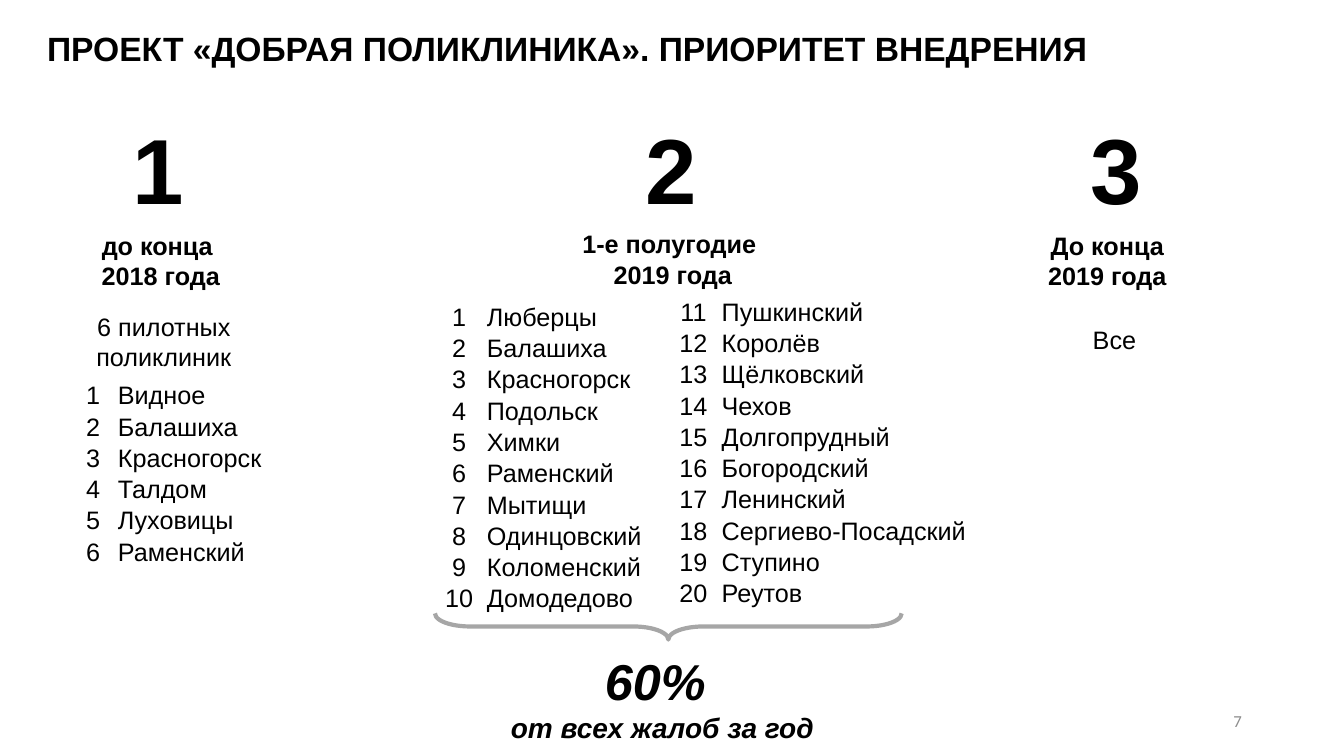
from dataclasses import dataclass

from pptx import Presentation
from pptx.dml.color import RGBColor
from pptx.enum.shapes import MSO_SHAPE
from pptx.enum.text import MSO_ANCHOR, MSO_AUTO_SIZE, PP_ALIGN
from pptx.oxml.ns import qn
from pptx.slide import Slide
from pptx.text.text import _Paragraph as Paragraph
from pptx.util import Pt

BLACK = RGBColor(0x00, 0x00, 0x00)
PAGE_GRAY = RGBColor(0x8C, 0x8C, 0x8C)
BRACE_GRAY = RGBColor(0xA6, 0xA6, 0xA6)
PLAIN_TABLE_STYLE = "{2D5ABB26-0587-4C30-8999-92F81FD0307C}"
ROW_HEIGHT = 22.3
CELL_MARGIN = 0.72


@dataclass(frozen=True)
class Font:
    size: float
    bold: bool = False
    italic: bool = False
    color: RGBColor = BLACK
    name: str = "Arial"


BODY = Font(18)
HEADING = Font(18, bold=True)
NUMERAL = Font(66, bold=True)


@dataclass(frozen=True)
class Label:
    left: float
    top: float
    width: float
    height: float
    lines: tuple[str, ...]
    fonts: tuple[Font, ...]
    align: PP_ALIGN = PP_ALIGN.CENTER
    wrap: bool = True
    middle: bool = False
    space_before: float = 0


@dataclass(frozen=True)
class DistrictList:
    left: float
    top: float
    number_width: float
    name_width: float
    first_number: int
    names: tuple[str, ...]
    empty_rows: int = 0


LABELS = (
    Label(678.2, 500.4, 216, 28.8, ("7",),
          (Font(12, color=PAGE_GRAY, name="Calibri"),), PP_ALIGN.RIGHT, middle=True),
    Label(26.6, 16.6, 837.4, 36, ("ПРОЕКТ «ДОБРАЯ ПОЛИКЛИНИКА». ПРИОРИТЕТ ВНЕДРЕНИЯ",),
          (Font(24, bold=True),), PP_ALIGN.LEFT),
    # Stage numerals
    Label(87.8, 76.3, 51.8, 87.1, ("1",), (NUMERAL,), PP_ALIGN.LEFT, wrap=False),
    Label(454.3, 76.3, 51.8, 87.1, ("2",), (NUMERAL,), PP_ALIGN.LEFT, wrap=False),
    Label(771.8, 76.3, 51.8, 87.1, ("3",), (NUMERAL,), PP_ALIGN.LEFT, wrap=False),
    # Stage deadlines
    Label(64.8, 160.6, 100.1, 51.1, ("до конца ", "2018 года"), (HEADING,) * 2, wrap=False),
    Label(408.2, 159.8, 144.7, 51.1, ("1-е полугодие ", "2019 года"), (HEADING,) * 2,
          wrap=False),
    Label(740.2, 160.6, 101.5, 51.1, ("До конца", "2019 года"), (HEADING,) * 2, wrap=False),
    # Stage coverage
    Label(39.6, 198, 154.8, 91.4, ("6 пилотных поликлиник",), (BODY,), middle=True,
          space_before=12),
    Label(718.6, 196.6, 154.8, 91.4, ("Все",), (BODY,), middle=True, space_before=12),
    # Share of complaints
    Label(319, 460.8, 308.2, 74.9, ("60% ", "от всех жалоб за год"),
          (Font(36, bold=True, italic=True), Font(20, bold=True, italic=True))),
)

DISTRICT_LISTS = (
    DistrictList(308.9, 214.6, 38.2, 190.1, 1, (
        "Люберцы", "Балашиха", "Красногорск", "Подольск", "Химки",
        "Раменский", "Мытищи", "Одинцовский", "Коломенский", "Домодедово")),
    DistrictList(475.9, 211, 38.9, 191.5, 11, (
        "Пушкинский", "Королёв", "Щёлковский", "Чехов", "Долгопрудный",
        "Богородский", "Ленинский", "Сергиево-Посадский", "Ступино", "Реутов")),
    DistrictList(49.7, 270.7, 33.8, 225.4, 1, (
        "Видное", "Балашиха", "Красногорск", "Талдом", "Луховицы", "Раменский"),
        empty_rows=3),
)


def format_paragraph(paragraph: Paragraph, font: Font, align: PP_ALIGN) -> None:
    paragraph.alignment = align
    for run in paragraph.runs:
        run.font.name = font.name
        run.font.size = Pt(font.size)
        run.font.bold = font.bold
        run.font.italic = font.italic
        run.font.color.rgb = font.color


def draw_label(slide: Slide, label: Label) -> None:
    shape = slide.shapes.add_textbox(
        Pt(label.left), Pt(label.top), Pt(label.width), Pt(label.height))
    text_frame = shape.text_frame
    text_frame.text = "\n".join(label.lines)
    text_frame.word_wrap = label.wrap
    if label.middle:
        text_frame.vertical_anchor = MSO_ANCHOR.MIDDLE
    else:
        text_frame.auto_size = MSO_AUTO_SIZE.SHAPE_TO_FIT_TEXT
    for paragraph, font in zip(text_frame.paragraphs, label.fonts):
        format_paragraph(paragraph, font, label.align)
        paragraph.space_before = Pt(label.space_before)


def draw_district_list(slide: Slide, districts: DistrictList) -> None:
    row_count = len(districts.names) + districts.empty_rows
    table = slide.shapes.add_table(
        row_count, 2, Pt(districts.left), Pt(districts.top),
        Pt(districts.number_width + districts.name_width),
        Pt(row_count * ROW_HEIGHT)).table
    table.first_row = False
    table.horz_banding = False
    table._tbl.tblPr.find(qn("a:tableStyleId")).text = PLAIN_TABLE_STYLE
    table.columns[0].width = Pt(districts.number_width)
    table.columns[1].width = Pt(districts.name_width)
    for row in table.rows:
        row.height = Pt(ROW_HEIGHT)
    for cell in table.iter_cells():
        cell.fill.background()
        cell.vertical_anchor = MSO_ANCHOR.BOTTOM
        cell.margin_left = cell.margin_right = cell.margin_top = Pt(CELL_MARGIN)
        cell.margin_bottom = Pt(0)
    for row_index, name in enumerate(districts.names):
        number = str(districts.first_number + row_index)
        columns = ((number, PP_ALIGN.CENTER), (name, PP_ALIGN.LEFT))
        for column_index, (text, align) in enumerate(columns):
            text_frame = table.cell(row_index, column_index).text_frame
            text_frame.text = text
            format_paragraph(text_frame.paragraphs[0], BODY, align)


def draw_brace(slide: Slide) -> None:
    brace = slide.shapes.add_shape(
        MSO_SHAPE.RIGHT_BRACE, Pt(468), Pt(280.8), Pt(18.7), Pt(333.4))
    brace.rotation = 90
    brace.adjustments[0] = 1.34
    brace.adjustments[1] = 0.5
    brace.shadow.inherit = False
    brace.fill.background()
    brace.line.color.rgb = BRACE_GRAY
    brace.line.width = Pt(3)


def main() -> None:
    presentation = Presentation()
    presentation.slide_width = Pt(960)
    presentation.slide_height = Pt(540)
    slide = presentation.slides.add_slide(presentation.slide_layouts[6])
    for label in LABELS:
        draw_label(slide, label)
    for districts in DISTRICT_LISTS:
        draw_district_list(slide, districts)
    draw_brace(slide)
    presentation.save("out.pptx")


if __name__ == "__main__":
    main()
